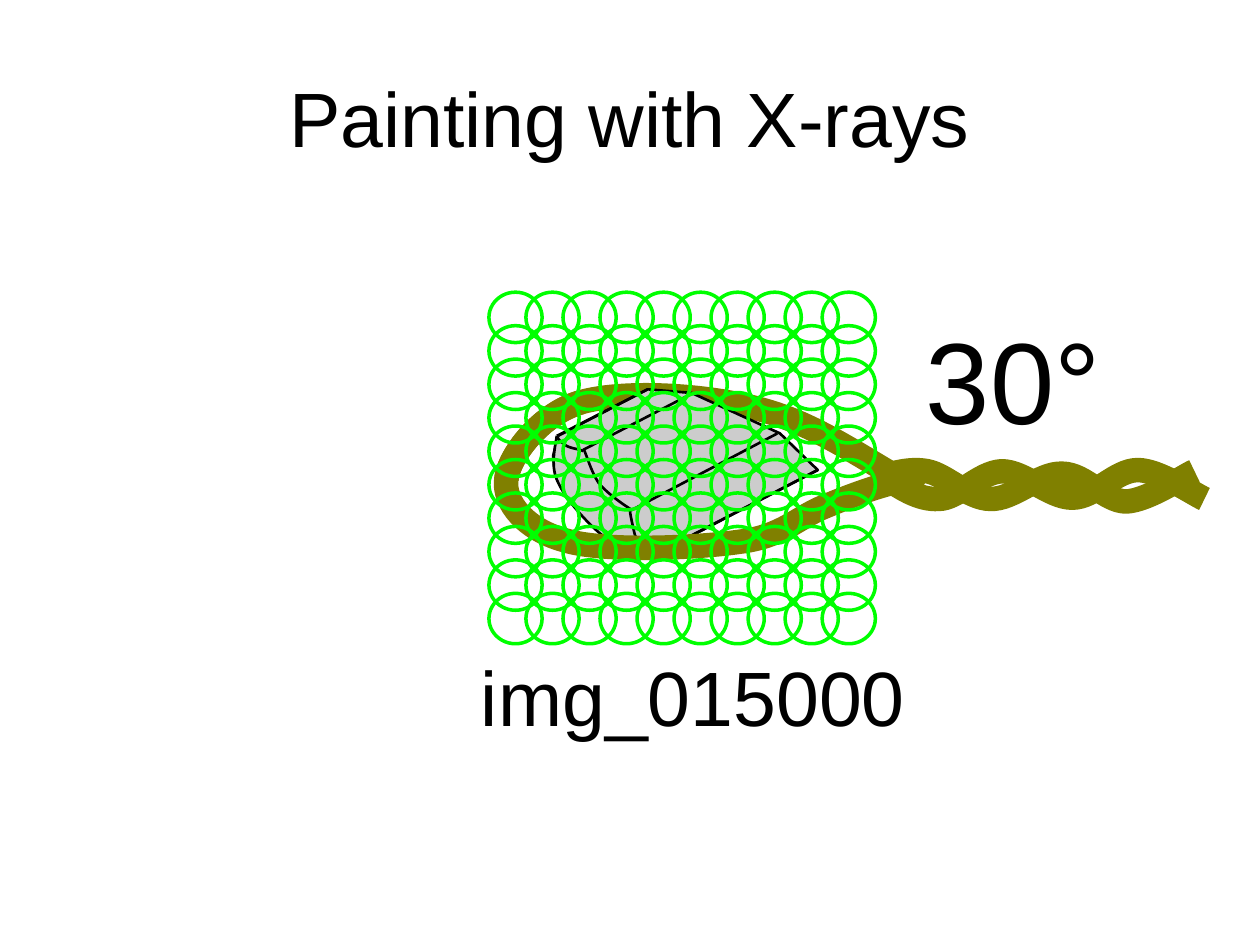
"""Build the slide showing a looped crystal under a grid of X-ray beam spots."""
import pptx
import pptx.util
import pptx.dml.color
import pptx.enum.shapes
import pptx.enum.text
import pptx.oxml.ns
import lxml.etree

Pt = pptx.util.Pt
COLORS = {"loop": "808000", "crystal": "CCCCCC", "ink": "000000", "beam": "00FF00"}
LOOP_WIDTH, EDGE_WIDTH, BEAM_WIDTH = 14, 1.5, 2

LOOP_BACK = [
    (521.3, 277.9), (486.7, 257.8), (463.7, 241.2), (432, 233.3), (401, 225.4),
    (356.4, 223.2), (332.6, 229.7), (308.9, 236.2), (290.9, 260.6), (289.4, 273.6)]
CRYSTAL_OUTLINE = [
    (467.3, 268.6), (372.2, 318.2), (367.2, 316.8), (359.3, 313.9), (350.6, 309.6),
    (342.7, 303.8), (334.8, 296.6), (326.2, 287.3), (321.1, 279.4), (317.5, 272.2),
    (316.8, 267.1), (316.1, 260.6), (317.5, 254.9), (319, 249.1), (370.1, 222.5),
    (395.3, 224.6), (445.7, 247.7)]
CRYSTAL_RIDGES = [
    ((467.3, 268.6), (371.5, 318.2)), ((444.2, 247.7), (360.7, 291.6)),
    ((393.1, 226.1), (333.4, 257)), ((370.1, 222.5), (318.2, 249.1))]
CRYSTAL_CURVES = [
    [(372.2, 318.2), (362.2, 315.4), (352.8, 312.5), (343.4, 305.3), (334.8, 298.1),
     (323.3, 285.1), (319, 275.8), (314.6, 267.1), (316.8, 257.8), (318.2, 249.1)],
    [(372.2, 318.2), (370.8, 317.5), (364.3, 308.2), (362.9, 306), (362.2, 303.1),
     (360, 293.8), (360, 291.6)],
    [(361.4, 291.6), (357.8, 289.4), (347, 282.2), (342, 275.8), (337.7, 269.3),
     (335.5, 260.6), (333.4, 256.3)],
    [(333.4, 257.8), (330.5, 256.3), (324.7, 256.3), (321.8, 253.4), (319, 251.3),
     (319, 250.6), (318.2, 249.1)]]
LOOP_FRONT = [
    (332.6, 229.7), (308.9, 236.2), (290.9, 260.6), (289.4, 273.6), (287.3, 287.3),
    (301, 303.1), (323.3, 308.9), (344.9, 315.4), (398.2, 313.2), (422.6, 309.6),
    (447.1, 306.7), (456.5, 295.2), (471.6, 289.4), (486.7, 283), (503.3, 277.2),
    (514.1, 275), (525.6, 272.9), (527, 273.6), (529.2, 275)]
TWISTED_STRANDS = [
    [(504, 271.4), (514.1, 278.6), (524.9, 285.8), (536.4, 285.1), (547.2, 285.1),
     (559.4, 270), (572.4, 269.3), (585.4, 269.3), (599.8, 284.4), (612.7, 284.4),
     (625.7, 284.4), (637.2, 268.6), (650.2, 268.6), (662.4, 268.6), (681.8, 282.2),
     (688.3, 285.1)],
    [(502.6, 272.2), (508.3, 271.4), (519.1, 267.1), (529.9, 269.3), (540.7, 271.4),
     (553.7, 285.1), (565.9, 285.1), (578.9, 285.8), (594, 270), (607, 270.7),
     (619.9, 270.7), (631.4, 286.6), (643.7, 286.6), (656.6, 285.8), (676.1, 272.2),
     (682.6, 269.3)]]
BEAM_GRID = {"left": 279.4, "top": 167, "step_x": 21.16, "step_y": 19.12,
             "width": 30.4, "height": 28.8, "count": 10}
LABELS = [
    ("30°", 66, (522, 172.8, 115.2, 87.1), False),
    ("img_015000", 44, (267.8, 367.9, 259.2, 60.5), False),
    ("Painting with X-rays", 44, (36, 21.6, 648, 90), True)]


def color(name):
    return pptx.dml.color.RGBColor.from_string(COLORS[name])


def style(shape, line, width, fill=None):
    shape.shadow.inherit = False
    shape.line.color.rgb = color(line)
    shape.line.width = Pt(width)
    if fill:
        shape.fill.solid()
        shape.fill.fore_color.rgb = color(fill)
    else:
        shape.fill.background()


def add_outline(slide, points, close):
    (start_x, start_y), *rest = [(Pt(x), Pt(y)) for x, y in points]
    builder = slide.shapes.build_freeform(start_x, start_y)
    builder.add_line_segments(rest, close=close)
    return builder.convert_to_shape()


def add_curve(slide, points, line, width, fill=None):
    shape = add_outline(slide, points, False)
    qn = pptx.oxml.ns.qn
    segments = list(shape._element.iter(qn("a:lnTo")))
    for first in range(0, len(segments), 3):
        triple = segments[first:first + 3]
        curve = lxml.etree.Element(qn("a:cubicBezTo"))
        triple[0].addprevious(curve)
        for segment in triple:
            curve.append(segment[0])
            segment.getparent().remove(segment)
    style(shape, line, width, fill)


def add_ridge(slide, start, end):
    ridge = slide.shapes.add_connector(
        pptx.enum.shapes.MSO_CONNECTOR.STRAIGHT, *map(Pt, start + end))
    ridge.line.color.rgb = color("ink")
    ridge.line.width = Pt(EDGE_WIDTH)
    lxml.etree.SubElement(ridge._element.spPr, pptx.oxml.ns.qn("a:effectLst"))


def add_beam_grid(slide):
    grid = BEAM_GRID
    for row in range(grid["count"]):
        for column in range(grid["count"]):
            spot = slide.shapes.add_shape(
                pptx.enum.shapes.MSO_SHAPE.OVAL,
                Pt(grid["left"] + column * grid["step_x"]),
                Pt(grid["top"] + row * grid["step_y"]),
                Pt(grid["width"]), Pt(grid["height"]))
            style(spot, "beam", BEAM_WIDTH)


def add_label(slide, text, size, place, is_title):
    box = slide.shapes.add_textbox(*map(Pt, place))
    frame = box.text_frame
    frame.text = text
    frame.word_wrap = is_title
    para = frame.paragraphs[0]
    if is_title:
        frame.vertical_anchor = pptx.enum.text.MSO_ANCHOR.MIDDLE
        para.alignment = pptx.enum.text.PP_ALIGN.CENTER
    else:
        frame.auto_size = pptx.enum.text.MSO_AUTO_SIZE.SHAPE_TO_FIT_TEXT
    font = para.runs[0].font
    font.name = "Arial"
    font.size = Pt(size)
    font.color.rgb = color("ink")


def main():
    deck = pptx.Presentation()
    deck.slide_width, deck.slide_height = Pt(720), Pt(540)
    slide = deck.slides.add_slide(deck.slide_layouts[6])
    add_curve(slide, LOOP_BACK, "loop", LOOP_WIDTH)
    style(add_outline(slide, CRYSTAL_OUTLINE, True), "ink", EDGE_WIDTH, "crystal")
    for start, end in CRYSTAL_RIDGES:
        add_ridge(slide, start, end)
    for points in CRYSTAL_CURVES:
        add_curve(slide, points, "ink", EDGE_WIDTH, "crystal")
    for points in [LOOP_FRONT, *TWISTED_STRANDS]:
        add_curve(slide, points, "loop", LOOP_WIDTH)
    add_beam_grid(slide)
    for label in LABELS:
        add_label(slide, *label)
    deck.save("out.pptx")


if __name__ == "__main__":
    main()
